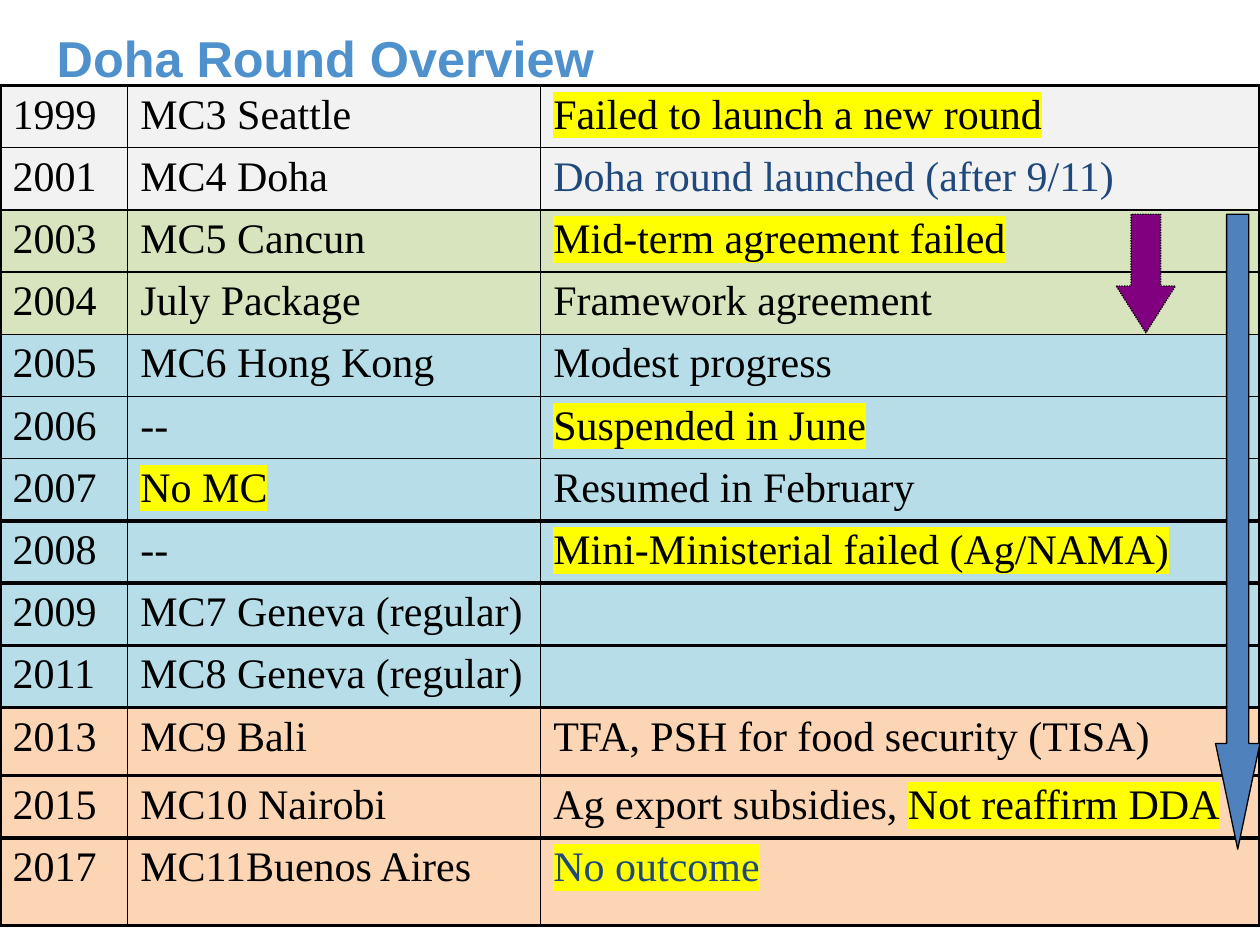
from lxml import etree
from pptx import Presentation
from pptx.dml.color import RGBColor
from pptx.enum import dml, shapes, text
from pptx.oxml import ns
from pptx.util import Pt

TITLE = "Doha Round Overview"
BLACK, NAVY, YELLOW = "000000", "1F497D", "FFFF00"
GREY, GREEN, AQUA, PEACH = "F2F2F2", "D7E4BD", "B7DEE8", "FCD5B5"

# Each cell is a list of (text, colour, highlight) runs; a bare string is one plain run.
ROWS = [
    (GREY, "1999", "MC3 Seattle", [("Failed to launch a new round", BLACK, YELLOW)]),
    (GREY, "2001", "MC4 Doha", [("Doha round launched (after 9/11)", NAVY, None)]),
    (GREEN, "2003", "MC5 Cancun", [("Mid-term agreement failed", BLACK, YELLOW)]),
    (GREEN, "2004", "July Package", "Framework agreement"),
    (AQUA, "2005", "MC6 Hong Kong", "Modest progress"),
    (AQUA, "2006", "--", [("Suspended in June", BLACK, YELLOW)]),
    (AQUA, "2007", [("No MC", BLACK, YELLOW)], "Resumed in February"),
    (AQUA, "2008", "--", [("Mini-Ministerial failed (Ag/NAMA)", BLACK, YELLOW)]),
    (AQUA, "2009", "MC7 Geneva (regular)", ""),
    (AQUA, "2011", "MC8 Geneva (regular)", ""),
    (PEACH, "2013", "MC9 Bali", "TFA, PSH for food security (TISA)"),
    (PEACH, "2015", "MC10 Nairobi",
     [("Ag export subsidies, ", BLACK, None), ("Not reaffirm DDA", BLACK, YELLOW)]),
    (PEACH, "2017", "MC11Buenos Aires", [("No outcome", NAVY, YELLOW)]),
]
COLUMN_WIDTHS = (73, 236, 411)
ROW_HEIGHT = 35.55
TALL_ROWS = {"2013": 39, "2017": 50}
FIRST_THICK_ROW = 7  # from 2008 on, rows are parted by thick lines
THIN, THICK = 1, 2.25

# left, top, width, height, head length / width, fill, dash
ARROWS = [
    (637.9, 122.4, 33.8, 67.8, 0.79, "800080", dml.MSO_LINE.ROUND_DOT),
    (694.6, 122.4, 25.4, 362.9, 2.38, "4F81BD", None),
]


def color(value):
    return RGBColor.from_string(value)


def apply(target, values):
    for name, value in values.items():
        setattr(target, name, value)


def add_element(parent, tag, **attributes):
    return etree.SubElement(parent, ns.qn(tag), attributes)


def set_borders(cell, widths):
    """Draw black borders; widths maps L, R, T and B to points."""
    properties = cell._tc.get_or_add_tcPr()
    for side, width in widths.items():
        line = add_element(properties, f"a:ln{side}", w=str(Pt(width)))
        fill = add_element(line, "a:solidFill")
        add_element(fill, "a:srgbClr", val=BLACK)


def write_runs(paragraph, runs):
    spacing = add_element(paragraph._p.get_or_add_pPr(), "a:spcBef")
    add_element(spacing, "a:spcPct", val="20000")
    for words, ink, highlight in runs:
        run = paragraph.add_run()
        run.text = words
        apply(run.font, {"size": Pt(24), "name": "Times New Roman"})
        run.font.color.rgb = color(ink)
        if highlight:
            mark = add_element(run._r.rPr, "a:highlight")
            add_element(mark, "a:srgbClr", val=highlight)
            run._r.rPr.find(ns.qn("a:solidFill")).addnext(mark)


def add_title(slide):
    title = slide.shapes.title
    apply(title, {"left": Pt(25.2), "top": Pt(10.8), "width": Pt(658.8), "height": Pt(43.9)})
    title.text_frame.text = TITLE
    title.text_frame.vertical_anchor = text.MSO_ANCHOR.MIDDLE
    paragraph = title.text_frame.paragraphs[0]
    paragraph.alignment = text.PP_ALIGN.LEFT
    apply(paragraph.runs[0].font, {"size": Pt(28.8), "name": "Arial", "bold": True})
    paragraph.runs[0].font.color.rgb = color("4F91CD")


def add_timeline(slide):
    heights = [TALL_ROWS.get(year, ROW_HEIGHT) for _, year, *_ in ROWS]
    table = slide.shapes.add_table(
        len(ROWS), len(COLUMN_WIDTHS), 0, Pt(48.8),
        Pt(sum(COLUMN_WIDTHS)), Pt(sum(heights))).table
    apply(table, {"first_row": False, "horz_banding": False})
    for column, width in zip(table.columns, COLUMN_WIDTHS):
        column.width = Pt(width)
    last_column = len(COLUMN_WIDTHS) - 1
    for r, (fill, *contents) in enumerate(ROWS):
        table.rows[r].height = Pt(heights[r])
        for c, content in enumerate(contents):
            cell = table.cell(r, c)
            set_borders(cell, {
                "L": THICK if c == 0 else THIN,
                "R": THICK if c == last_column else THIN,
                "T": THICK if r == 0 or r >= FIRST_THICK_ROW else THIN,
                "B": THICK if r + 1 >= FIRST_THICK_ROW else THIN,
            })
            cell.fill.solid()
            cell.fill.fore_color.rgb = color(fill)
            if isinstance(content, str):
                content = [(content, BLACK, None)] if content else []
            write_runs(cell.text_frame.paragraphs[0], content)


def add_arrow(slide, left, top, width, height, head, fill, dash):
    arrow = slide.shapes.add_shape(
        shapes.MSO_SHAPE.DOWN_ARROW, Pt(left), Pt(top), Pt(width), Pt(height))
    arrow.shadow.inherit = False
    arrow.adjustments[0], arrow.adjustments[1] = 0.5, head
    arrow.fill.solid()
    arrow.fill.fore_color.rgb = color(fill)
    arrow.line.color.rgb = color(BLACK)
    apply(arrow.line, {"width": Pt(0.75), "dash_style": dash})


def main():
    presentation = Presentation()
    apply(presentation, {"slide_width": Pt(720), "slide_height": Pt(540)})
    slide = presentation.slides.add_slide(presentation.slide_layouts.get_by_name("Title Only"))
    add_title(slide)
    add_timeline(slide)
    for arrow in ARROWS:
        add_arrow(slide, *arrow)
    presentation.save("out.pptx")


if __name__ == "__main__":
    main()
